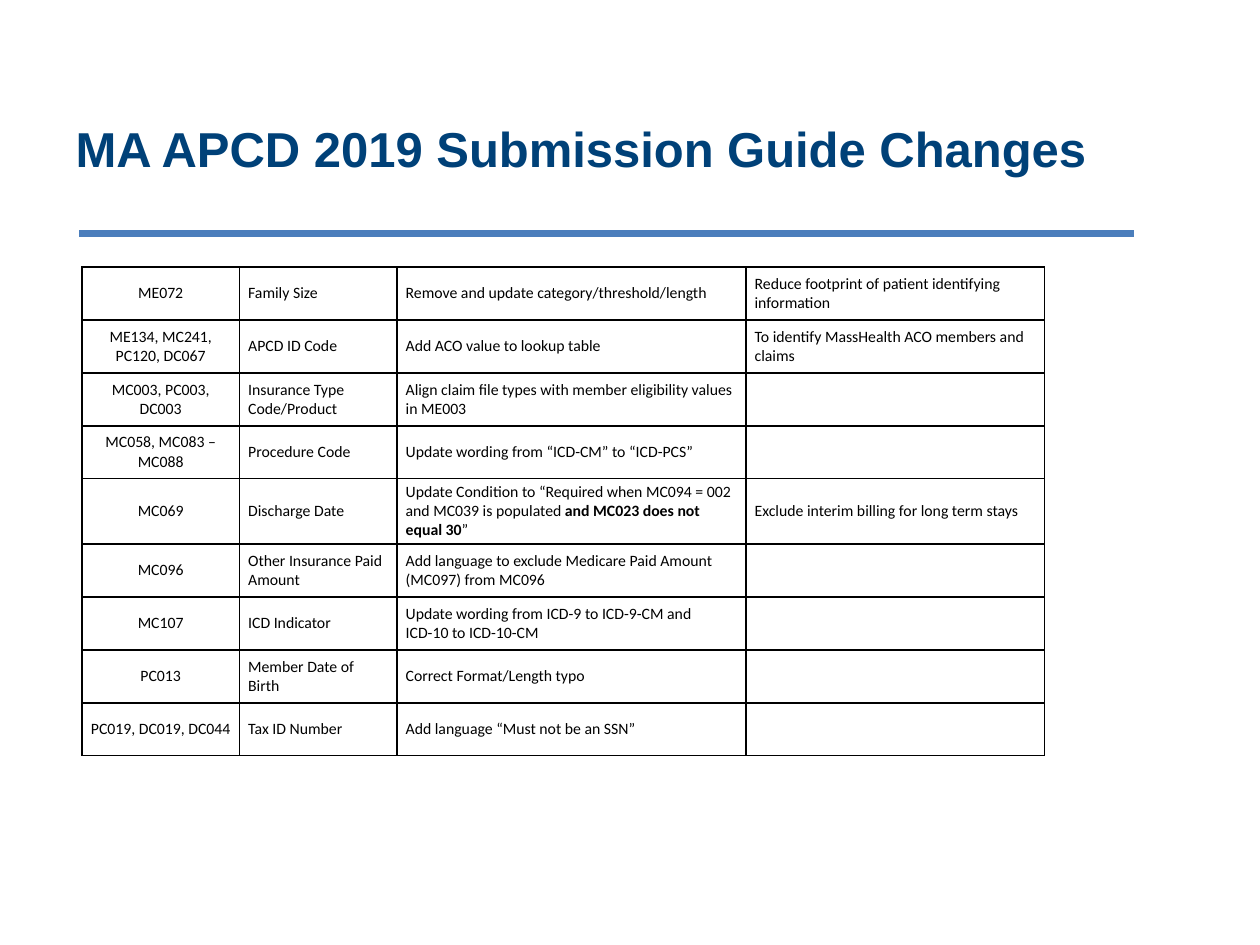
from lxml.etree import SubElement
from pptx import Presentation
from pptx.dml.color import RGBColor
from pptx.enum.shapes import MSO_CONNECTOR
from pptx.enum.text import MSO_ANCHOR as Anchor, PP_ALIGN as Align
from pptx.oxml.ns import qn
from pptx.util import Inches, Pt

COLUMN_WIDTHS = [1.25, 1.25, 2.77, 2.37]
ROW_HEIGHT = 0.42
TALL_ROW_HEIGHT = 0.52
TALL_ROW = 4
CHANGES = [
    ["ME072", "Family Size", "Remove and update category/threshold/length",
     "Reduce footprint of patient identifying information"],
    ["ME134, MC241, PC120, DC067", "APCD ID Code", "Add ACO value to lookup table",
     "To identify MassHealth ACO members and claims"],
    ["MC003, PC003, DC003", "Insurance Type Code/Product",
     "Align claim file types with member eligibility values in ME003", ""],
    ["MC058, MC083 – MC088", "Procedure Code",
     "Update wording from “ICD-CM” to “ICD-PCS”", ""],
    ["MC069", "Discharge Date",
     ["Update Condition to “Required when MC094 = 002 and MC039 is populated ",
      "and MC023 does not equal 30", "”"],
     "Exclude interim billing for long term stays"],
    ["MC096", "Other Insurance Paid Amount",
     "Add language to exclude Medicare Paid Amount (MC097) from MC096", ""],
    ["MC107", "ICD Indicator",
     "Update wording from ICD-9 to ICD-9-CM and ICD-10 to ICD-10-CM", ""],
    ["PC013", "Member Date of Birth", "Correct Format/Length typo", ""],
    ["PC019, DC019, DC044", "Tax ID Number", "Add language “Must not be an SSN”", ""],
]


def color(hex_string):
    """Return the colour for a hex string."""
    return RGBColor.from_string(hex_string)


def write_text(frame, text, font="Calibri", size=9, fill="000000", bold=False, align=Align.LEFT):
    """Write one paragraph; in a list of runs, every second run switches weight."""
    paragraph = frame.paragraphs[0]
    paragraph.alignment = align
    paragraph.font.size = Pt(size)
    for index, part in enumerate([text] if isinstance(text, str) else text):
        if not part:
            continue
        run = paragraph.add_run()
        run.text = part
        run.font.name = font
        run.font.size = Pt(size)
        run.font.bold = bold != bool(index % 2)
        run.font.color.rgb = color(fill)


def add_title(slide, text, left, top, width, height):
    """Place and format the slide title."""
    title = slide.shapes.title
    title.left, title.top = Inches(left), Inches(top)
    title.width, title.height = Inches(width), Inches(height)
    title.text_frame.word_wrap = True
    title.text_frame.vertical_anchor = Anchor.MIDDLE
    write_text(title.text_frame, text, font="Arial", size=28, fill="004178", bold=True)


def add_rule(slide, left, top, width):
    """Draw the horizontal rule under the title."""
    rule = slide.shapes.add_connector(MSO_CONNECTOR.STRAIGHT, Inches(left), Inches(top),
                                      Inches(left + width), Inches(top))
    rule.line.color.rgb = color("4B7EBC")
    rule.line.width = Pt(4)
    SubElement(rule._element.spPr, qn("a:effectLst"))


def format_cell(cell):
    """Give a cell black borders, no fill, narrow margins and middle anchoring."""
    properties = cell._tc.get_or_add_tcPr()
    for side in ("a:lnL", "a:lnR", "a:lnT", "a:lnB"):
        border = SubElement(properties, qn(side), w=str(Pt(1)))
        SubElement(SubElement(border, qn("a:solidFill")), qn("a:srgbClr"), val="000000")
    cell.fill.background()
    cell.vertical_anchor = Anchor.MIDDLE
    cell.margin_left = cell.margin_right = Inches(0.07)
    cell.margin_top = cell.margin_bottom = 0


def add_changes_table(slide, left, top):
    """Build the table of submission guide changes."""
    heights = [TALL_ROW_HEIGHT if row == TALL_ROW else ROW_HEIGHT for row in range(len(CHANGES))]
    table = slide.shapes.add_table(len(CHANGES), len(COLUMN_WIDTHS), Inches(left), Inches(top),
                                   Inches(sum(COLUMN_WIDTHS)), Inches(sum(heights))).table
    table.first_row = table.horz_banding = False
    for column, width in zip(table.columns, COLUMN_WIDTHS):
        column.width = Inches(width)
    for row, height, texts in zip(table.rows, heights, CHANGES):
        row.height = Inches(height)
        for index, (cell, text) in enumerate(zip(row.cells, texts)):
            format_cell(cell)
            write_text(cell.text_frame, text, align=Align.LEFT if index else Align.CENTER)


def main():
    """Build and save the presentation."""
    presentation = Presentation()
    presentation.slide_width, presentation.slide_height = Inches(10), Inches(7.5)
    slide = presentation.slides.add_slide(presentation.slide_layouts.get_by_name("Title Only"))
    add_rule(slide, 0.63, 1.85, 8.37)
    add_title(slide, "MA APCD 2019 Submission Guide Changes", 0.5, 0.62, 8.5, 1.11)
    add_changes_table(slide, 0.65, 2.12)
    presentation.save("out.pptx")


if __name__ == "__main__":
    main()
